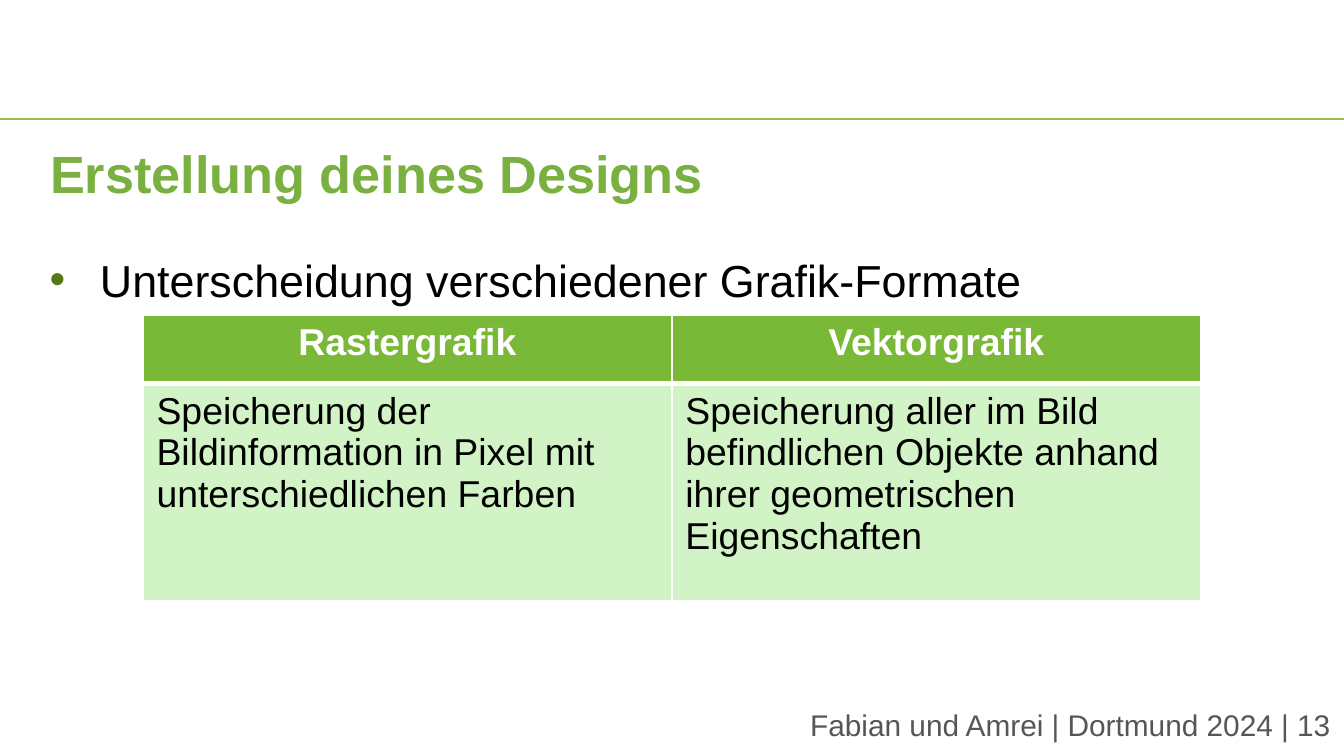
from lxml import etree
from pptx import Presentation, util as u
from pptx.dml.color import RGBColor
from pptx.enum import shapes, text as t
from pptx.oxml.ns import qn

SCALE = 4572  # EMU per px, 200 px to the inch


def px(n):
    return u.Emu(n * SCALE)


def color(code):
    return RGBColor.from_string(code)


def write(frame, words, size=20, ink="000000", bold=False,
          align=t.PP_ALIGN.LEFT, gap=None, bullet=None, indent=0):
    """Put one formatted paragraph into a text frame."""
    frame.word_wrap = True
    par = frame.paragraphs[0]
    par.alignment = align
    if gap:
        par.line_spacing = gap
    if bullet:
        props = par._p.get_or_add_pPr()
        props.set("marL", str(px(indent)))
        props.set("indent", str(-px(indent)))
        tint = etree.SubElement(props, qn("a:buClr"))
        etree.SubElement(tint, qn("a:srgbClr"), val=bullet)
        etree.SubElement(props, qn("a:buFont"), typeface="Arial")
        etree.SubElement(props, qn("a:buChar"), char="•")
    run = par.add_run()
    run.text = words
    font = run.font
    font.name, font.size, font.bold = "Arial", u.Pt(size), bold
    font.color.rgb = color(ink)


def edge(cell, **widths):
    """Draw white cell borders; the keywords L, R, T, B give points."""
    props = cell._tc.get_or_add_tcPr()
    for i, (side, width) in enumerate(widths.items()):
        line = etree.Element(qn(f"a:ln{side}"), w=str(u.Pt(width)))
        fill = etree.SubElement(line, qn("a:solidFill"))
        etree.SubElement(fill, qn("a:srgbClr"), val="FFFFFF")
        props.insert(i, line)


class Deck:
    """The style and the current slide."""
    green, head, pale = "79B040", "7AB838", "D2F3C5"
    rule, dot, grey = "98B955", "577915", "565656"

    def __init__(self, wide, high):
        self.file = Presentation()
        self.file.slide_width, self.file.slide_height = px(wide), px(high)
        self.slide = self.file.slides.add_slide(self.file.slide_layouts[6])

    def line(self, x1, y1, x2, y2):
        line = self.slide.shapes.add_connector(
            shapes.MSO_CONNECTOR.STRAIGHT, px(x1), px(y1), px(x2), px(y2))
        line.line.color.rgb = color(self.rule)
        line.line.width = u.Pt(0.75)
        etree.SubElement(line._element.spPr, qn("a:effectLst"))

    def label(self, x, y, w, h, words, anchor=t.MSO_ANCHOR.TOP, **style):
        frame = self.slide.shapes.add_textbox(
            px(x), px(y), px(w), px(h)).text_frame
        frame.vertical_anchor = anchor
        write(frame, words, **style)

    def table(self, x, y, cols, rows, data):
        grid = self.slide.shapes.add_table(
            len(rows), len(cols), px(x), px(y),
            px(sum(cols)), px(sum(rows))).table
        for col, w in zip(grid.columns, cols):
            col.width = px(w)
        for r, (h, line) in enumerate(zip(rows, data)):
            grid.rows[r].height = px(h)
            for c, words in enumerate(line):
                cell = grid.cell(r, c)
                cell.fill.solid()
                cell.fill.fore_color.rgb = color(self.pale if r else self.head)
                if r:
                    write(cell.text_frame, words)
                    edge(cell, L=1, R=1, T=3, B=1)
                else:
                    write(cell.text_frame, words, ink="FFFFFF", bold=True,
                          align=t.PP_ALIGN.CENTER)
                    edge(cell, L=1, R=1, T=1, B=3)


def main():
    deck = Deck(2000, 1125)
    deck.line(0, 177, 2000, 177)
    deck.label(948, 1034, 1052, 88, "Fabian und Amrei | Dortmund 2024 | 13",
               anchor=t.MSO_ANCHOR.MIDDLE, size=16,
               ink=deck.grey, align=t.PP_ALIGN.RIGHT)
    deck.label(55, 200, 1890, 110, "Erstellung deines Designs",
               size=28, ink=deck.green, bold=True)
    deck.label(54, 326, 1890, 708,
               "Unterscheidung verschiedener Grafik-Formate",
               size=24, gap=1.5, bullet=deck.dot, indent=75)
    deck.table(213, 469, [787, 787], [102, 323], [
        ["Rastergrafik", "Vektorgrafik"],
        ["Speicherung der Bildinformation in Pixel mit "
         "unterschiedlichen Farben",
         "Speicherung aller im Bild befindlichen Objekte anhand "
         "ihrer geometrischen Eigenschaften"],
    ])
    deck.file.save("out.pptx")


if __name__ == "__main__":
    main()
